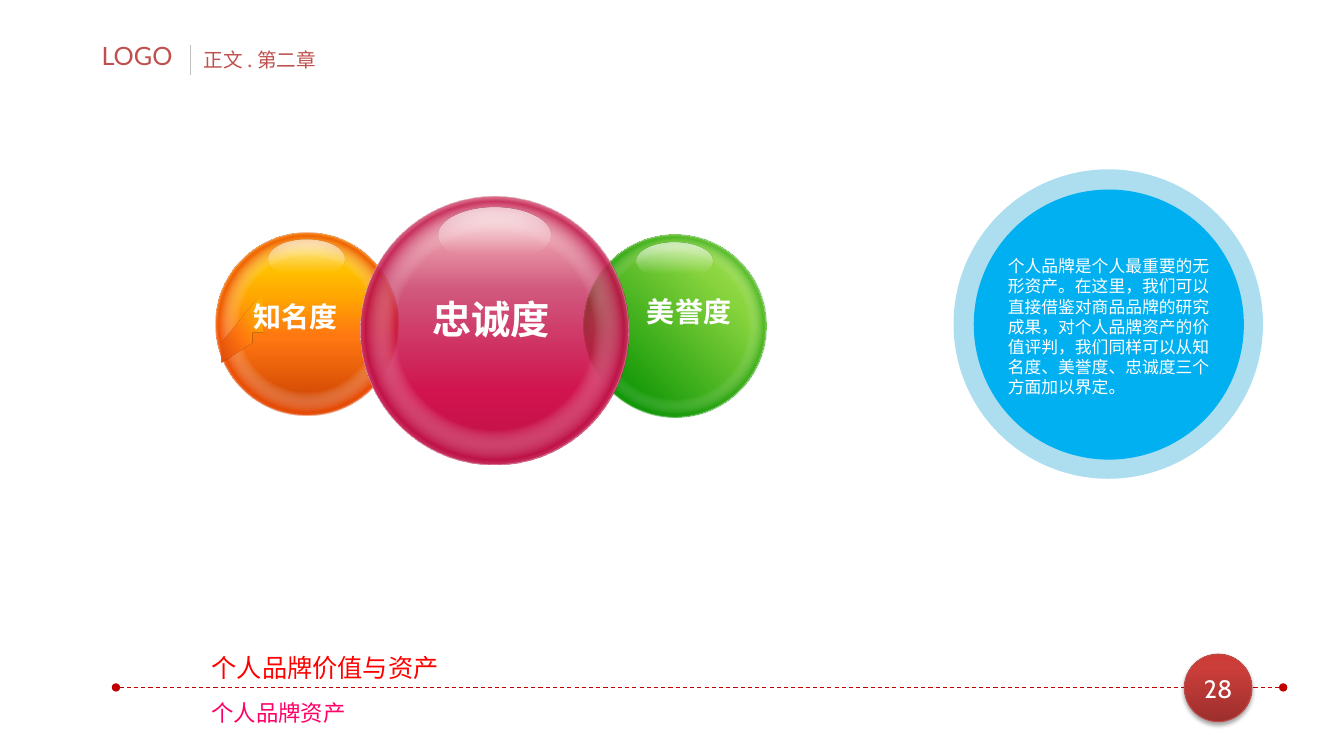
import pptx
import pptx.util
import pptx.dml.color
import pptx.oxml
import pptx.oxml.ns
import pptx.enum.shapes
import pptx.enum.text
import pptx.enum.dml

CELL = pptx.util.Inches(0.1)
COLUMNS, ROWS = 133.33, 75
CHINESE = "Noto Sans CJK SC"
OVAL = pptx.enum.shapes.MSO_SHAPE.OVAL
CENTER = pptx.enum.text.PP_ALIGN.CENTER
MIDDLE = pptx.enum.text.MSO_ANCHOR.MIDDLE

TITLE = "个人品牌价值与资产"
SUBTITLE = "个人品牌资产"
CHAPTER = "正文 . 第二章"
LOGO = "LOGO"
PAGE = "28"
SUMMARY = ("个人品牌是个人最重要的无形资产。在这里，我们可以直接借鉴对商品品牌的研究成果，"
           "对个人品牌资产的价值评判，我们同样可以从知名度、美誉度、忠诚度三个方面加以界定。")

SPHERES = [
    {"label": "美誉度", "size": 20, "box": (63.2, 28.7, 12.2, 4.3), "align": None,
     "left": 57.9, "top": 23.3, "diameter": 18.1, "angle": 315,
     "body": [(18, "119707"), (74, "8AD53F"), (100, "BCEB6F")],
     "rim": [(56, "FFFFFF", 0), (68, "119707", 45), (84, "FFFFFF", 0)]},
    {"label": "知名度", "size": 20, "box": (22.5, 29.2, 13.7, 4.3), "align": CENTER,
     "left": 21.4, "top": 23.1, "diameter": 18.1, "angle": 270,
     "body": [(0, "C73E01"), (43, "FF7711"), (67, "FFAA01"), (80, "FFC000"), (100, "FECE02")],
     "rim": [(52, "FFFFFF", 0), (68, "ED4A01", 80), (80, "FFFFFF", 0)],
     "facet": True},
    {"label": "忠诚度", "size": 28, "box": (36.2, 28.8, 25, 5.7), "align": CENTER,
     "left": 35.75, "top": 19.5, "diameter": 26.6, "angle": 270,
     "body": [(0, "BE1247"), (27, "D2144F"), (66, "BE1247", 69), (100, "FA9496", 50)],
     "rim": [(52, "FFFFFF", 0), (68, "BE1247", 80), (80, "FFFFFF", 0)]},
]
SHINE = [(12, "FFFFFF", 60), (84, "FFFFFF", 0)]
BADGE = [(0, "9C2F2D"), (80, "CB3E3A"), (100, "CE3B37")]
FACET = [(3, "E14D0B"), (42, "FF7711"), (80, "FFAC06"), (97, "FECE02", 0)]
FACET_CURVES = [
    [(22.3, 35.7), (22.1, 35.5), (21.6, 34.6), (21.6, 33.5)],
    [(26.4, 30.1), (26, 32.8), (25.5, 32.7), (25.1, 33.9)],
]


def cells(*values):
    return [round(value * CELL) for value in values]


def color(value):
    return pptx.dml.color.RGBColor.from_string(value)


def element(xml):
    tag, rest = xml.split(" ", 1) if " " in xml.split(">")[0] else (xml.split(">")[0], ">" + xml.split(">", 1)[1])
    return pptx.oxml.parse_xml(f"{tag} {pptx.oxml.ns.nsdecls('a')} {rest}")


def color_xml(value, opacity=100):
    return f'<a:srgbClr val="{value}"><a:alpha val="{opacity * 1000}"/></a:srgbClr>'


def paint(shape, stops, angle=None, line=None, width=0.25):
    shape.shadow.inherit = False
    if len(stops) == 1:
        xml = f'<a:solidFill>{color_xml(*stops[0])}</a:solidFill>'
    else:
        marks = "".join(f'<a:gs pos="{position * 1000}">{color_xml(*tone)}</a:gs>'
                        for position, *tone in stops)
        if angle is None:
            direction = ('<a:path path="circle"><a:fillToRect l="50000" t="50000" '
                         'r="50000" b="50000"/></a:path>')
        else:
            direction = f'<a:lin ang="{angle * 60000}" scaled="0"/>'
        xml = f'<a:gradFill rotWithShape="1"><a:gsLst>{marks}</a:gsLst>{direction}</a:gradFill>'
    shape.element.spPr.insert(2, element(xml))
    if line:
        shape.line.color.rgb = color(line)
        shape.line.width = pptx.util.Pt(width)
    else:
        shape.line.fill.background()


def write(shape, text, size, tone="FFFFFF", font=CHINESE, bold=False, align=None,
          anchor=pptx.enum.text.MSO_ANCHOR.TOP, insets=(1, 0.5, 1, 0.5)):
    frame = shape.text_frame
    frame.word_wrap = True
    frame.auto_size = pptx.enum.text.MSO_AUTO_SIZE.NONE
    frame.vertical_anchor = anchor
    frame.margin_left, frame.margin_top, frame.margin_right, frame.margin_bottom = cells(*insets)
    paragraph = frame.paragraphs[0]
    paragraph.alignment = align or pptx.enum.text.PP_ALIGN.LEFT
    paragraph.line_spacing = pptx.util.Pt(size * 1.2)
    run = paragraph.add_run()
    run.text = text
    run.font.size = pptx.util.Pt(size)
    run.font.bold = bold
    run.font.color.rgb = color(tone)
    run.font.name = font
    run.font._element.append(element(f'<a:ea typeface="{font}"/>'))


def add_text(shapes, box, text, size, **text_format):
    write(shapes.add_textbox(*cells(*box)), text, size, **text_format)


def add_circle(shapes, left, top, diameter, stops, **paint_format):
    circle = shapes.add_shape(OVAL, *cells(left, top, diameter, diameter))
    paint(circle, stops, **paint_format)
    return circle


def add_line(shapes, start, end, tone):
    line = shapes.add_connector(pptx.enum.shapes.MSO_CONNECTOR.STRAIGHT, *cells(*start, *end))
    line.line.color.rgb = color(tone)
    line.line.width = pptx.util.Pt(0.75)
    line.element.spPr.append(element("<a:effectLst></a:effectLst>"))
    return line


def curve_points(curve, steps=8):
    for step in range(steps + 1):
        t = step / steps
        weights = ((1 - t) ** 3, 3 * t * (1 - t) ** 2, 3 * t * t * (1 - t), t ** 3)
        yield tuple(sum(weight * point[axis] for weight, point in zip(weights, curve))
                    for axis in (0, 1))


def add_facet(shapes):
    left_curve, right_curve = FACET_CURVES
    points = [*curve_points(left_curve), (25.6, 28.7), *curve_points(right_curve)]
    builder = shapes.build_freeform(*points[0], scale=CELL)
    builder.add_line_segments(points[1:], close=True)
    paint(builder.convert_to_shape(), FACET, angle=330)


def add_sphere(slide, sphere):
    shapes = slide.shapes.add_group_shape().shapes
    left, top, diameter = sphere["left"], sphere["top"], sphere["diameter"]
    add_circle(shapes, left, top, diameter, sphere["body"], angle=sphere["angle"], line="FFFFFF")
    add_circle(shapes, left, top, diameter, sphere["rim"])
    width = diameter * 0.415
    shine = shapes.add_shape(OVAL, *cells(left + (diameter - width) / 2, top + diameter * 0.04,
                                          width, width / 2))
    paint(shine, SHINE, angle=90)
    if sphere.get("facet"):
        add_facet(shapes)
    add_text(shapes, sphere["box"], sphere["label"], sphere["size"], bold=True,
             align=sphere["align"])


def add_frame(slide):
    shapes = slide.shapes
    title = shapes.title
    title.left, title.top, title.width, title.height = cells(21, 64.2, 38.6, 4)
    write(title, TITLE, 18, tone="FF0000", insets=(0, 0.5, 1, 0.5))
    add_line(shapes, (18.9, 4.5), (18.9, 7.4), "BFBFBF")
    add_text(shapes, (19.2, 4.4, 72.6, 3.1), CHAPTER, 14, tone="C0504D", anchor=MIDDLE)
    add_text(shapes, (9.1, 3.5, 9.8, 4), LOGO, 18, tone="C0504D", font="Lato")

    rule = add_line(shapes, (11.5, 68.2), (127.3, 68.2), "C00000")
    rule.line.dash_style = pptx.enum.dml.MSO_LINE.DASH
    for end in ("head", "tail"):
        rule.line._ln.append(element(f'<a:{end}End type="oval"/>'))

    badge = add_circle(shapes, 117.5, 64.9, 6.7, BADGE, angle=270, line="BF4C48", width=0.75)
    blur, distance = pptx.util.Pt(3.1), pptx.util.Pt(1.8)
    badge.element.spPr.find(pptx.oxml.ns.qn("a:effectLst")).append(element(
        f'<a:outerShdw blurRad="{blur}" dist="{distance}" dir="5400000" rotWithShape="0">'
        f'{color_xml("000000", 35)}</a:outerShdw>'))
    write(badge, PAGE, 18, font="Cabin", align=CENTER, anchor=MIDDLE, insets=(0.1, 0, 0.1, 0))
    add_text(shapes, (21, 68.9, 38.6, 3.7), SUBTITLE, 16, tone="FF0066", insets=(0, 0.5, 1, 0.5))


def add_summary(slide):
    shapes = slide.shapes.add_group_shape().shapes
    add_circle(shapes, 94.6, 16.8, 30.7, [("32AEDA", 40)])
    add_circle(shapes, 96.6, 18.8, 26.8, [("00B0F0",)])
    add_text(shapes, (99, 24.9, 22.8, 15), SUMMARY, 12)


def main():
    presentation = pptx.Presentation()
    presentation.slide_width, presentation.slide_height = cells(COLUMNS, ROWS)
    slide = presentation.slides.add_slide(presentation.slide_layouts[5])
    add_frame(slide)
    for sphere in SPHERES:
        add_sphere(slide, sphere)
    add_summary(slide)
    presentation.save("out.pptx")


if __name__ == "__main__":
    main()
